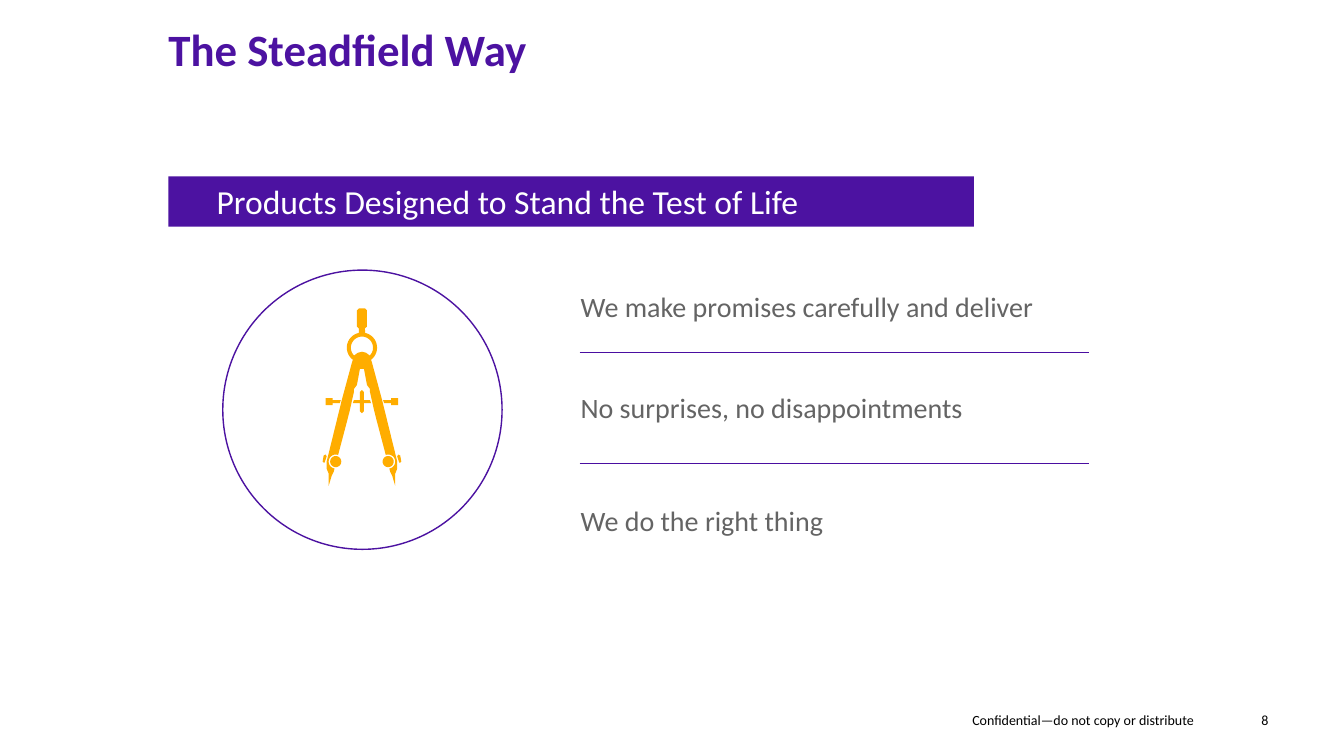
import math
from lxml import etree
from pptx import Presentation
from pptx.dml.color import RGBColor
from pptx.enum import shapes, text
from pptx.oxml.ns import qn
from pptx.util import Inches, Pt

THEME = {
    "font": "Calibri",
    "purple": "4C12A1", "rule": "4A0EA1", "gold": "FFAD00",
    "grey": "646464", "white": "FFFFFF", "black": "000000",
    "title": 32, "banner": 24, "body": 20, "footer": 10,
}
TITLE = "The Steadfield Way"
BANNER = "Products Designed to Stand the Test of Life"
PROMISES = [  # text, top
    ("We make promises carefully and deliver", 2.85),
    ("No surprises, no disappointments", 3.85),
    ("We do the right thing", 4.97),
]
RULES_Y = [3.5, 4.6]
FOOTERS = [  # text, left, width
    ("Confidential—do not copy or distribute", 9.41, 2.43),
    ("8", 12.21, 0.37),
]


def arc(cx, cy, r, start, end, step=9):
    """Points clockwise from start to end, in degrees from the top."""
    count = max(1, math.ceil(abs(end - start) / step))
    angles = [math.radians(start + (end - start) * i / count) for i in range(count + 1)]
    return [(cx + r * math.sin(a), cy - r * math.cos(a)) for a in angles]


# Drawing compass: x is measured from the axis of symmetry.
AXIS_X = 3.59
RING_Y = 3.45
HINGE = (0.26, 4.58)
BODY_HALF = [
    (0.03, 3.06), (0.05, 3.08), (0.05, 3.24), (0.03, 3.26),
    *arc(0, RING_Y, 0.15, 12, 143),
    (0.1, 3.6), (0.2, 3.97), (0.35, 4.58), (0.35, 4.65), (0.33, 4.7),
    (0.33, 4.82), (0.3, 4.72), (0.28, 4.68),
    *arc(*HINGE, 0.07, 170, -20),
    (0.14, 4.15), (0.12, 4.07), (0.08, 3.89), (0.08, 3.86), (0.05, 3.82),
    (0.02, 3.66),
]
CROSS_HALF = [
    (0, 3.87), (0.02, 3.89), (0.02, 3.97), (0.08, 3.97), (0.09, 4),
    (0.02, 4), (0.02, 4.08), (0, 4.1),
]
RING_HOLE = arc(0, RING_Y, 0.11, -135, 135) + [(0.04, 3.5), (0, 3.49), (-0.04, 3.5)]
SIDE_PARTS = [
    [(0.21, 3.97), (0.29, 3.97), (0.29, 3.95), (0.36, 3.95),
     (0.36, 4.02), (0.29, 4.02), (0.29, 4), (0.22, 4)],
    [(0.35, 4.53), (0.36, 4.51), (0.38, 4.52), (0.39, 4.58), (0.38, 4.59), (0.37, 4.59)],
    arc(*HINGE, 0.055, 0, 351),
]


def mirror(points):
    return [(-x, y) for x, y in reversed(points)]


def rgb(name):
    return RGBColor.from_string(THEME[name])


def write(sp, words, role, color, inset=None, bold=None, wrap=True,
          anchor=text.MSO_ANCHOR.TOP, **paragraph):
    tf = sp.text_frame
    frame = {"word_wrap": wrap, "vertical_anchor": anchor}
    if inset is not None:
        frame.update({f"margin_{side}": Inches(inset) for side in ("left", "top", "right", "bottom")})
    for key, value in frame.items():
        setattr(tf, key, value)
    p = tf.paragraphs[0]
    for key, value in {"alignment": text.PP_ALIGN.LEFT, **paragraph}.items():
        setattr(p, key, value)
    r = p.add_run()
    r.text = words
    for key, value in {"name": THEME["font"], "size": Pt(THEME[role]), "bold": bold}.items():
        setattr(r.font, key, value)
    r.font.color.rgb = rgb(color)
    return p


def add_text(slide, box, *args, **options):
    write(slide.shapes.add_textbox(*map(Inches, box)), *args, **options)


def add_compass(slide):
    contours = [half + mirror(half) for half in (BODY_HALF, CROSS_HALF)] + [RING_HOLE]
    for part in SIDE_PARTS:
        contours += [part, mirror(part)]
    outlines = [[(Inches(AXIS_X + x), Inches(y)) for x, y in c] for c in contours]
    builder = slide.shapes.build_freeform(*outlines[0][0])
    builder.add_line_segments(outlines[0][1:])
    for outline in outlines[1:]:
        builder.move_to(*outline[0])
        builder.add_line_segments(outline[1:])
    sp = builder.convert_to_shape()
    sp.shadow.inherit = False
    sp.fill.solid()
    sp.fill.fore_color.rgb = rgb("gold")
    sp.line.fill.background()


def main():
    prs = Presentation()
    prs.slide_width, prs.slide_height = Inches(13.33), Inches(7.5)
    slide = prs.slides.add_slide(prs.slide_layouts[6])

    for words, left, width in FOOTERS:
        add_text(slide, (left, 6.96, width, 0.27), words, "footer", "black", inset=0,
                 wrap=False, anchor=text.MSO_ANCHOR.BOTTOM, alignment=text.PP_ALIGN.RIGHT)
    add_text(slide, (1.67, 0.28, 8.99, 0.74), TITLE, "title", "purple",
             inset=0, bold=True, line_spacing=0.9)

    banner = slide.shapes.add_shape(shapes.MSO_SHAPE.RECTANGLE,
                                    *map(Inches, (1.67, 1.75, 7.99, 0.5)))
    banner.shadow.inherit = False
    banner.fill.solid()
    banner.fill.fore_color.rgb = rgb("purple")
    banner.line.fill.background()
    p = write(banner, BANNER, "banner", "white")
    p._p.get_or_add_pPr().set("indent", str(Inches(0.38)))

    for words, top in PROMISES:
        add_text(slide, (5.66, top, 7.1, 0.42), words, "body", "grey",
                 line_spacing=0.95, space_after=Pt(12))
    for y in RULES_Y:
        rule = slide.shapes.add_connector(shapes.MSO_CONNECTOR.STRAIGHT,
                                          *map(Inches, (5.75, y, 10.8, y)))
        rule.line.color.rgb = rgb("rule")
        rule.line.width = Pt(0.75)
        etree.SubElement(rule._element.spPr, qn("a:effectLst"))

    add_compass(slide)
    circle = slide.shapes.add_shape(shapes.MSO_SHAPE.OVAL,
                                    *map(Inches, (2.21, 2.68, 2.77, 2.77)))
    circle.shadow.inherit = False
    circle.fill.background()
    circle.line.color.rgb = rgb("purple")
    circle.line.width = Pt(1)

    prs.save("out.pptx")


if __name__ == "__main__":
    main()
